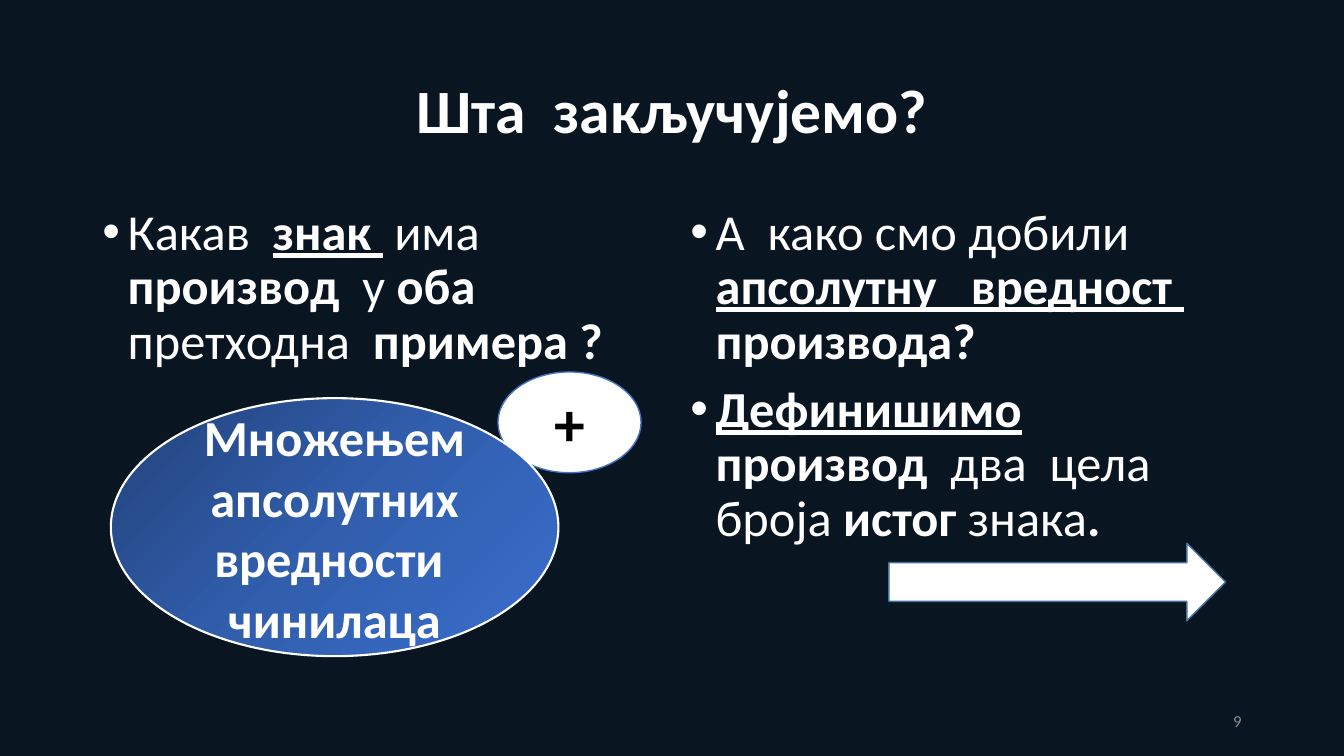
from copy import deepcopy

from lxml import etree
from pptx import Presentation
from pptx.dml.color import RGBColor
from pptx.enum import shapes, text
from pptx.oxml import ns
from pptx.util import Pt

COLORS = {
    "night": "091621", "white": "FFFFFF", "black": "000000", "grey": "8C8C8C",
    "plus_edge": "4472C4", "arrow_edge": "43739E",
    "deep": "23427A", "middle": "315EAD", "bright": "3A6FCE",
}
CENTER, RIGHT = text.PP_ALIGN.CENTER, text.PP_ALIGN.RIGHT


def rgb(name):
    return RGBColor.from_string(COLORS[name])


def style(paragraph, size, color="white", bold=None, align=None):
    paragraph.alignment = align
    paragraph.font.name = "Calibri"
    paragraph.font.size = Pt(size)
    paragraph.font.color.rgb = rgb(color)
    paragraph.font.bold = bold


deck = Presentation()
deck.slide_width, deck.slide_height = Pt(960), Pt(540)
slide = deck.slides.add_slide(deck.slide_layouts[3])
slide.background.fill.solid()
slide.background.fill.fore_color.rgb = rgb("night")

heading, left_question, right_question = slide.placeholders
heading.left, heading.top, heading.width, heading.height = Pt(66), Pt(28.8), Pt(828), Pt(104.4)
heading.text_frame.text = "Шта  закључујемо?"
heading.text_frame.vertical_anchor = text.MSO_ANCHOR.MIDDLE
heading.text_frame.paragraphs[0].line_spacing = 0.9
style(heading.text_frame.paragraphs[0], 44, bold=True, align=CENTER)

PLAIN, BOLD, KEY = (False, False), (True, False), (True, True)
questions = [
    (left_question, 66, [
        [("Какав  ", PLAIN), ("знак ", KEY), (" ", BOLD), ("има", PLAIN),
         ("  производ  ", BOLD), ("у", PLAIN), (" оба ", BOLD),
         ("претходна  ", PLAIN), ("примера ?", BOLD)],
    ]),
    (right_question, 486, [
        [("А  како смо добили ", PLAIN), ("апсолутну   вредност  ", KEY), ("производа?", BOLD)],
        [("Дефинишимо", KEY), ("  производ  ", BOLD), ("два  цела  броја", PLAIN),
         (" истог ", BOLD), ("знака", PLAIN), (".", BOLD)],
    ]),
]
for column, left, bullets in questions:
    column.left, column.top, column.width, column.height = Pt(left), Pt(144), Pt(408), Pt(342.7)
    frame = column.text_frame
    frame.auto_size = text.MSO_AUTO_SIZE.NONE
    for number, pieces in enumerate(bullets):
        bullet = frame.add_paragraph() if number else frame.paragraphs[0]
        bullet.line_spacing, bullet.space_before = 0.9, Pt(10)
        style(bullet, 36)
        properties = bullet._p.get_or_add_pPr()
        properties.set("marL", str(Pt(18)))
        properties.set("indent", str(Pt(-18)))
        for words, (bold, underline) in pieces:
            run = bullet.add_run()
            run.text = words
            run.font.bold, run.font.underline = bold, underline

page = slide.shapes.add_textbox(Pt(678), Pt(500.5), Pt(216), Pt(28.75)).text_frame
page.word_wrap = True
page.vertical_anchor = text.MSO_ANCHOR.MIDDLE
page.text = "9"
style(page.paragraphs[0], 12, "grey", align=RIGHT)

OVAL, ARROW = shapes.MSO_SHAPE.OVAL, shapes.MSO_SHAPE.RIGHT_ARROW
answers = [
    (OVAL, (355.7, 265.7, 102.2, 72), "plus_edge", 1, "+", 44, "black"),
    (ARROW, (635, 388.1, 240.5, 55.4), "arrow_edge", 1, "", 18, "white"),
    (OVAL, (79.2, 284.4, 319.7, 184.3), "white", 1.5,
     "Множењем апсолутних вредности  чинилаца", 36, "white"),
]
for outline, box, edge, weight, words, size, ink in answers:
    answer = slide.shapes.add_shape(outline, *map(Pt, box))
    answer.shadow.inherit = False
    answer.fill.solid()
    answer.fill.fore_color.rgb = rgb("white")
    answer.line.color.rgb = rgb(edge)
    answer.line.width = Pt(weight)
    if words:
        answer.text_frame.text = words
        answer.text_frame.vertical_anchor = text.MSO_ANCHOR.MIDDLE
        style(answer.text_frame.paragraphs[0], size, ink, True, CENTER)

multiplication = answer
multiplication.fill.gradient()
multiplication.fill.gradient_angle = 315
for stop, shade in zip(multiplication.fill.gradient_stops, ("deep", "bright")):
    stop.color.rgb = rgb(shade)
stops = multiplication._element.spPr.find(".//" + ns.qn("a:gsLst"))
halfway = deepcopy(stops[0])
halfway.set("pos", "50000")
halfway.remove(halfway[0])
etree.SubElement(halfway, ns.qn("a:srgbClr"), val=COLORS["middle"])
stops.insert(1, halfway)

deck.save("out.pptx")
